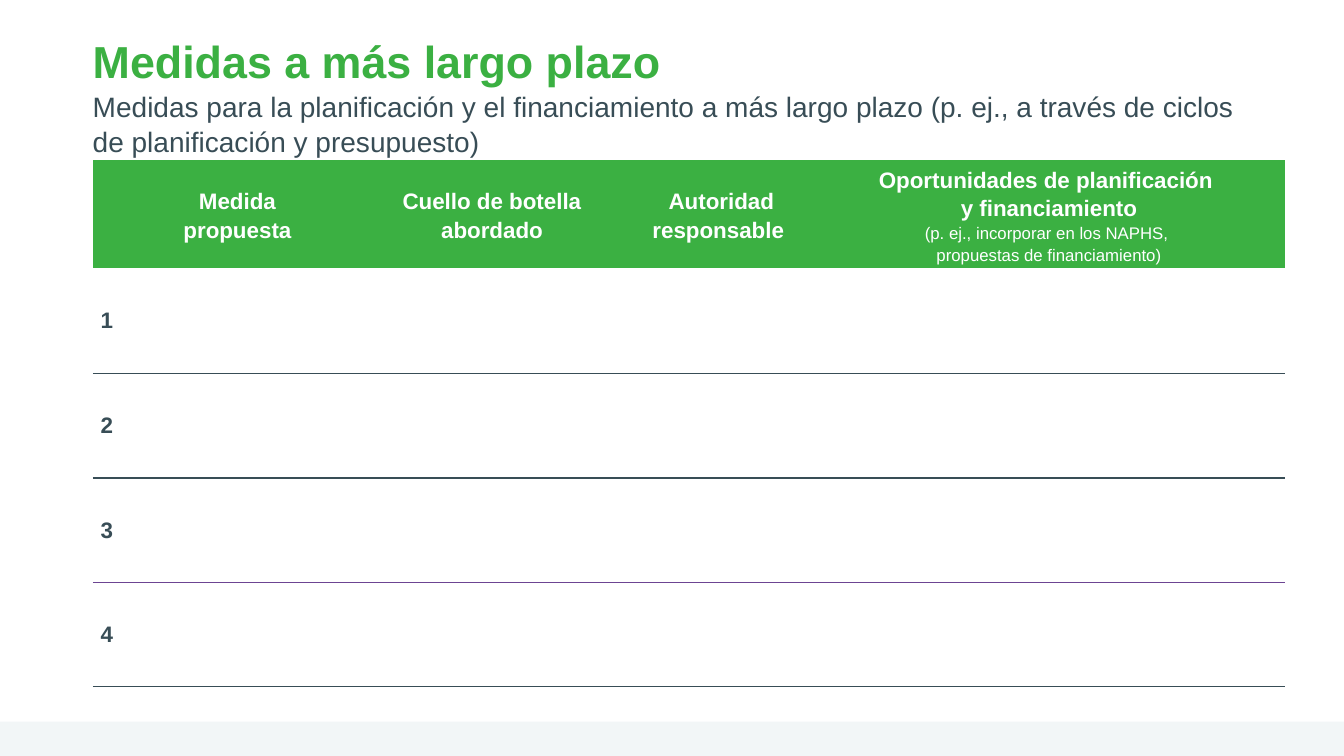
from lxml.etree import SubElement as Sub
from pptx import Presentation
from pptx.dml.color import RGBColor as RGB
from pptx.enum.shapes import MSO_SHAPE as Shape
from pptx.enum.text import MSO_ANCHOR as Anchor, PP_ALIGN as Align
from pptx.oxml.ns import qn
from pptx.util import Inches, Pt

GREEN = RGB(0x3B, 0xB0, 0x42)
SLATE = RGB(0x38, 0x4D, 0x56)
PURPLE = RGB(0x6C, 0x44, 0x92)
PALE = RGB(0xF2, 0xF6, 0xF7)
WHITE = RGB(0xFF, 0xFF, 0xFF)

COLS = [0.28, 2.31, 2.74, 1.81, 4.69]
ROWS = [1.0, 1.04, 1.04, 1.04, 1.03]
# Rule under each table row; None draws no rule
RULES = [None, SLATE, SLATE, PURPLE, SLATE]
# Each heading is a list of paragraphs, each paragraph a list of (text, size, bold)
HEADS = [
    [],
    [[("Medida\npropuesta", 16, True)]],
    [[("Cuello de botella", 16, True)], [("abordado", 16, True)]],
    [[("Autoridad\nresponsable\u00a0", 16, True)]],
    [[("Oportunidades de planificación \ny financiamiento\n", 16, True),
      ("(p. ej., incorporar en los NAPHS, \npropuestas de financiamiento)", 12, False)]],
]


class Deck:
    def __init__(self, font):
        self.font = font
        self.prs = Presentation()
        self.prs.slide_width = Inches(13.33)
        self.prs.slide_height = Inches(7.5)
        self.slide = self.prs.slides.add_slide(self.prs.slide_layouts[6])

    def run(self, para, text, size, color, bold):
        """Add styled text, with a line break at each newline."""
        for i, line in enumerate(text.split("\n")):
            if i:
                para.add_line_break()
            if line:
                run = para.add_run()
                run.text = line
                font = run.font
                font.name, font.size, font.bold = self.font, Pt(size), bold
                font.color.rgb = color

    def band(self, x, y, w, h, color):
        bar = self.slide.shapes.add_shape(
            Shape.RECTANGLE, Inches(x), Inches(y), Inches(w), Inches(h))
        bar.shadow.inherit = False
        bar.fill.solid()
        bar.fill.fore_color.rgb = color
        bar.line.fill.background()

    def text(self, x, y, w, h, runs, space):
        box = self.slide.shapes.add_textbox(Inches(x), Inches(y), Inches(w), Inches(h))
        frame = box.text_frame
        frame.word_wrap = True
        frame.margin_left = frame.margin_right = 0
        frame.margin_top = frame.margin_bottom = 0
        para = frame.paragraphs[0]
        para.line_spacing = space
        for run in runs:
            self.run(para, *run)

    def table(self, x, y, cols, rows):
        grid = self.slide.shapes.add_table(
            len(rows), len(cols), Inches(x), Inches(y),
            Inches(sum(cols)), Inches(sum(rows))).table
        grid.first_row = grid.horz_banding = False
        for col, w in zip(grid.columns, cols):
            col.width = Inches(w)
        for row, h in zip(grid.rows, rows):
            row.height = Inches(h)
        return grid

    def edges(self, cell, top, bottom):
        """Draw the top and bottom rules of a cell and clear its sides."""
        props = cell._tc.get_or_add_tcPr()
        for side, color in (("L", None), ("R", None), ("T", top), ("B", bottom)):
            line = Sub(props, qn(f"a:ln{side}"), w=str(Pt(1)))
            if color is None:
                Sub(line, qn("a:noFill"))
            else:
                Sub(Sub(line, qn("a:solidFill")), qn("a:srgbClr"), val=str(color))

    def cell(self, cell, paras, color, pad, space, fill=None):
        cell.vertical_anchor = Anchor.MIDDLE
        cell.margin_left = cell.margin_right = Inches(pad[0])
        cell.margin_top = cell.margin_bottom = Inches(pad[1])
        if fill is None:
            cell.fill.background()
        else:
            cell.fill.solid()
            cell.fill.fore_color.rgb = fill
        frame = cell.text_frame
        for i, runs in enumerate(paras):
            para = frame.add_paragraph() if i else frame.paragraphs[0]
            para.alignment = Align.CENTER
            para.line_spacing = space
            for text, size, bold in runs:
                self.run(para, text, size, color, bold)


def main():
    deck = Deck("Arial")
    deck.band(0, 7.16, 13.33, 0.34, PALE)
    deck.text(0.92, 0.31, 11.5, 1.19, [
        ("Medidas a más largo plazo\n", 32, GREEN, True),
        ("Medidas para la planificación y el financiamiento a más largo plazo "
         "(p. ej., a través de ciclos de planificación y presupuesto)", 20, SLATE, False),
    ], 1.05)

    grid = deck.table(0.92, 1.59, COLS, ROWS)
    for r in range(len(ROWS)):
        for c in range(len(COLS)):
            cell = grid.cell(r, c)
            deck.edges(cell, RULES[r - 1] if r else None, RULES[r])
            if r == 0:
                deck.cell(cell, HEADS[c], WHITE, (0.07, 0), 1.15, GREEN)
            else:
                label = [[(str(r), 16, True)]] if c == 0 else []
                deck.cell(cell, label, SLATE, (0.05, 0.05), 1.0)
    deck.prs.save("out.pptx")


if __name__ == "__main__":
    main()
